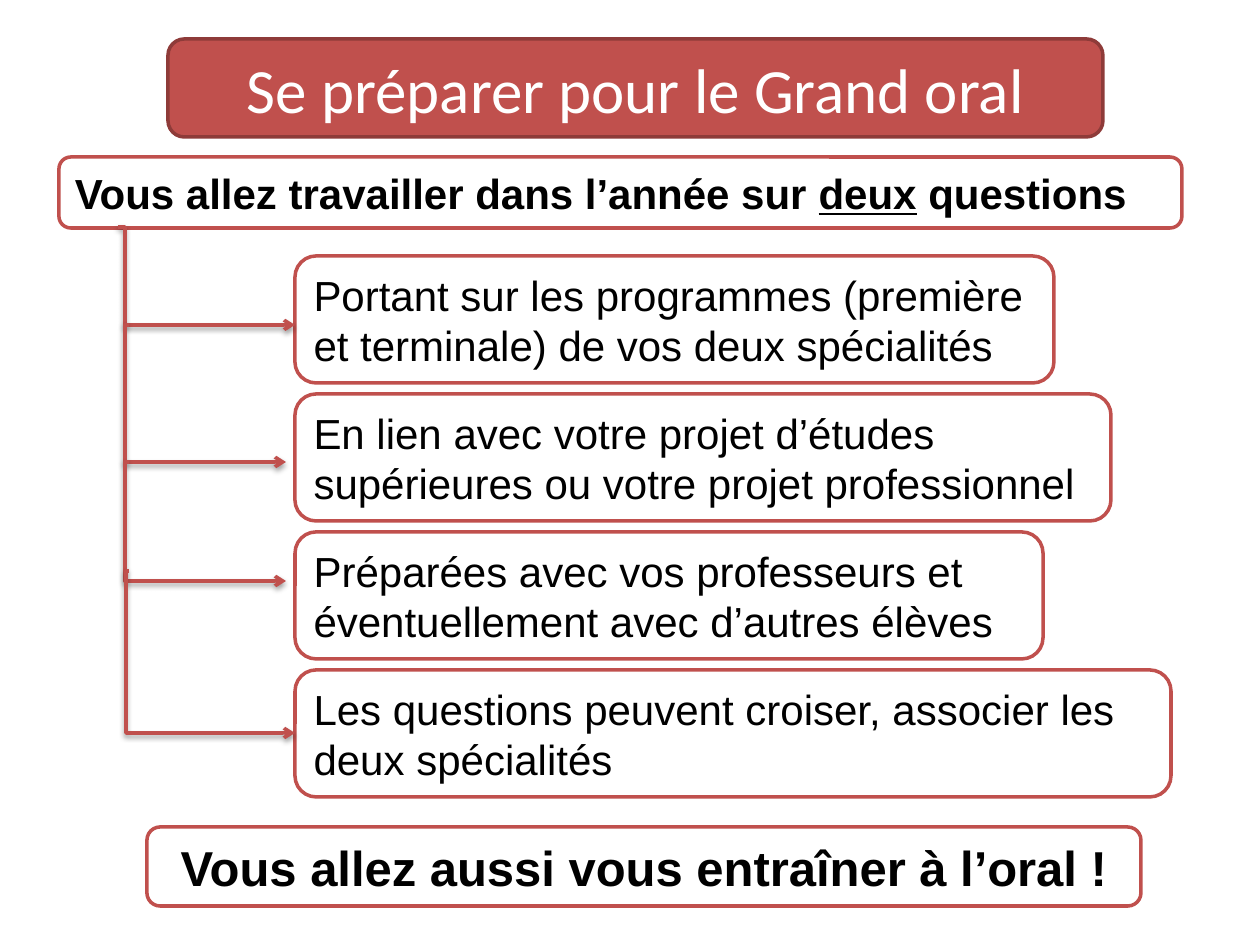
from dataclasses import dataclass

from lxml.etree import SubElement
from pptx import Presentation
from pptx.dml.color import RGBColor
from pptx.enum.shapes import MSO_CONNECTOR as Connector, MSO_SHAPE as Shape
from pptx.enum.text import MSO_ANCHOR as Anchor, MSO_AUTO_SIZE as AutoSize, PP_ALIGN as Align
from pptx.oxml.ns import qn
from pptx.slide import Slide
from pptx.util import Emu, Inches, Pt

PX_PER_INCH = 126
RED = RGBColor(0xC0, 0x50, 0x4D)
DARK_RED = RGBColor(0x8E, 0x3B, 0x39)
WHITE = RGBColor(0xFF, 0xFF, 0xFF)
BLACK = RGBColor(0x00, 0x00, 0x00)

ITEM_LEFT, ITEM_TOP, ITEM_HEIGHT, ITEM_PITCH = 295, 256, 127, 138


@dataclass(frozen=True)
class Box:
    left: int
    top: int
    width: int
    height: int
    runs: tuple[str, ...]
    size: int = 24
    bold: bool | None = None
    align: Align = Align.LEFT
    font: str = "Arial"
    color: RGBColor = BLACK
    fill: RGBColor = WHITE
    line: RGBColor = RED
    underlined: str = ""


@dataclass(frozen=True)
class Branch:
    left: int
    top: int
    right: int
    bottom: int
    trunk: int


ITEMS = (
    (759, "Portant sur les programmes (première et terminale) de vos deux spécialités"),
    (816, "En lien avec votre projet d’études supérieures ou votre projet professionnel"),
    (748, "Préparées avec vos professeurs et éventuellement avec d’autres élèves"),
    (876, "Les questions peuvent croiser, associer les deux spécialités"),
)

BOXES = (
    Box(168, 39, 935, 98, ("Se préparer pour le Grand oral",), size=36, align=Align.CENTER,
        font="Calibri", color=WHITE, fill=RED, line=DARK_RED),
    Box(59, 157, 1123, 71,
        ("Vous allez travailler dans l’année sur ", "deux", " questions"),
        bold=True, underlined="deux"),
    *(Box(ITEM_LEFT, ITEM_TOP + index * ITEM_PITCH, width, ITEM_HEIGHT, (text,))
      for index, (width, text) in enumerate(ITEMS)),
    Box(147, 827, 994, 79, ("Vous allez aussi vous entraîner à l’oral !",), size=28,
        bold=True, align=Align.CENTER),
)

BRANCHES = (
    Branch(118, 227, 295, 325, 125),
    Branch(129, 325, 286, 462, 125),
    Branch(129, 462, 286, 581, 125),
    Branch(129, 571, 295, 733, 126),
)


def px(length: int) -> Emu:
    return Emu(round(length * Inches(1) / PX_PER_INCH))


def draw_box(slide: Slide, box: Box) -> None:
    shape = slide.shapes.add_shape(
        Shape.ROUNDED_RECTANGLE, px(box.left), px(box.top), px(box.width), px(box.height))
    shape.shadow.inherit = False
    shape.fill.solid()
    shape.fill.fore_color.rgb = box.fill
    shape.line.color.rgb = box.line
    shape.line.width = Pt(2)
    frame = shape.text_frame
    frame.word_wrap = True
    frame.auto_size = AutoSize.SHAPE_TO_FIT_TEXT
    frame.vertical_anchor = Anchor.MIDDLE
    paragraph = frame.paragraphs[0]
    paragraph.alignment = box.align
    paragraph.font.name = box.font
    paragraph.font.size = Pt(box.size)
    paragraph.font.bold = box.bold
    paragraph.font.color.rgb = box.color
    for text in box.runs:
        run = paragraph.add_run()
        run.text = text
        if text == box.underlined:
            run.font.underline = True


def draw_branch(slide: Slide, branch: Branch) -> None:
    connector = slide.shapes.add_connector(
        Connector.ELBOW, px(branch.left), px(branch.top), px(branch.right), px(branch.bottom))
    connector.line.color.rgb = RED
    connector.line.width = Pt(2)
    properties = connector._element.spPr
    SubElement(properties.find(qn("a:ln")), qn("a:tailEnd"), type="arrow")

    bend = round((branch.trunk - branch.left) / (branch.right - branch.left) * 100000)
    guides = properties.find(qn("a:prstGeom")).find(qn("a:avLst"))
    SubElement(guides, qn("a:gd"), name="adj1", fmla=f"val {bend}")

    effects = SubElement(properties, qn("a:effectLst"))
    shadow = SubElement(effects, qn("a:outerShdw"), blurRad="40000", dist="20000",
                        dir="5400000", rotWithShape="0")
    color = SubElement(shadow, qn("a:srgbClr"), val=str(BLACK))
    SubElement(color, qn("a:alpha"), val="38000")


def main() -> None:
    presentation = Presentation()
    presentation.slide_width = Inches(10)
    presentation.slide_height = Inches(7.5)
    slide = presentation.slides.add_slide(presentation.slide_layouts[6])
    for box in BOXES:
        draw_box(slide, box)
    for branch in BRANCHES:
        draw_branch(slide, branch)
    presentation.save("out.pptx")


if __name__ == "__main__":
    main()
